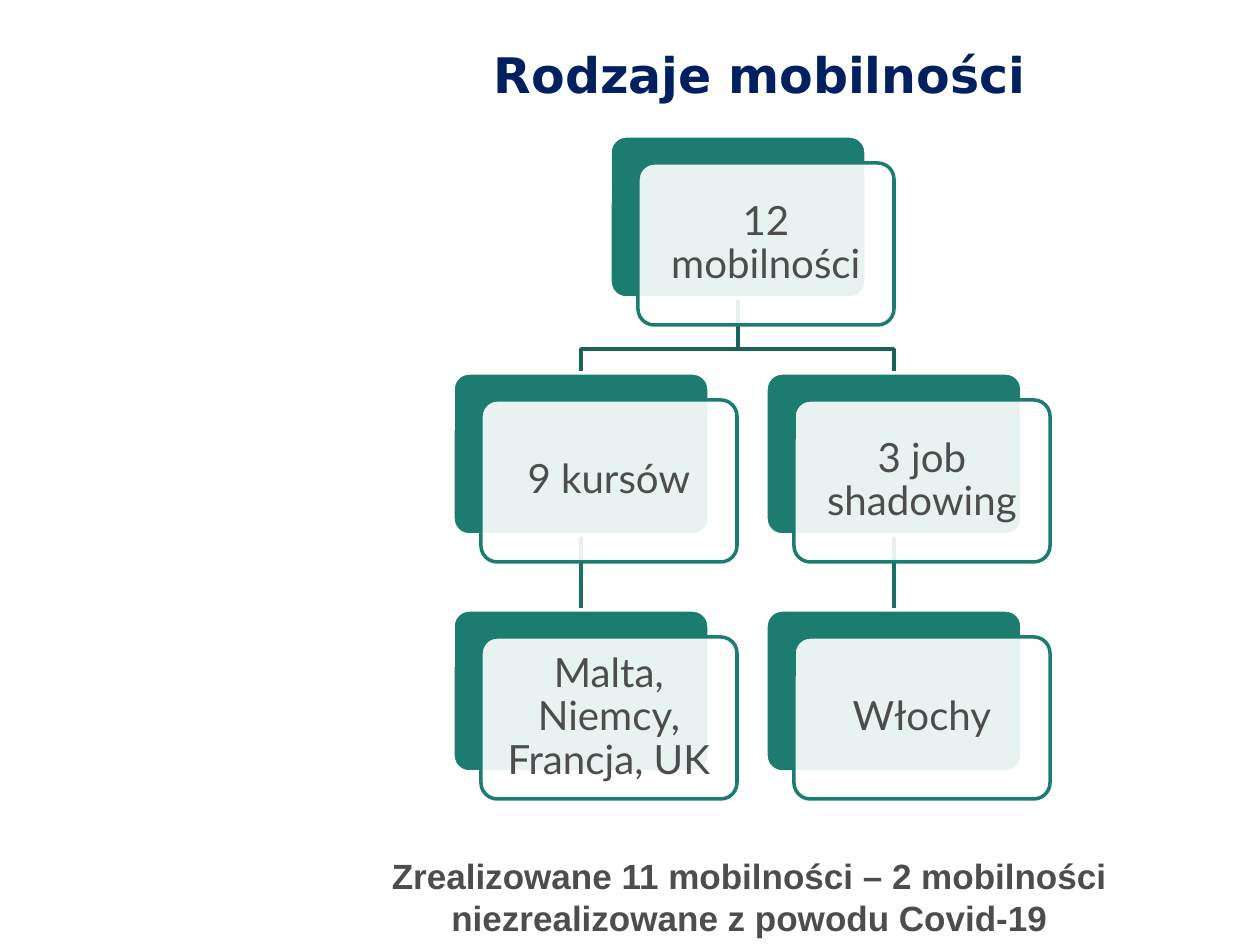
from dataclasses import dataclass

import pptx
import pptx.dml.color
import pptx.enum.shapes
import pptx.enum.text
import pptx.oxml
import pptx.oxml.ns
import pptx.util

PX = 914400 // 126
SLIDE_SIZE = (1260, 945)

CARD_WIDTH, CARD_HEIGHT = 256, 162
FRONT_SHIFT = (28, 27)
LEFT, TOP = 453, 136
COLUMN_STEP, ROW_STEP = 313, 237
BEND_ABOVE_CHILD = 24

# (text, column, row); the root stands halfway between the two columns
ROOT = ("12 mobilności", 0.5, 0)
BRANCHES = [
    [("9 kursów", 0, 1), ("Malta, Niemcy, Francja, UK", 0, 2)],
    [("3 job shadowing", 1, 1), ("Włochy", 1, 2)],
]


@dataclass(frozen=True)
class Theme:
    title: str = "002060"
    text: str = "4D4D4D"
    card: str = "1C7C70"
    white: str = "FFFFFF"
    upper_link: str = "16635A"
    lower_link: str = "197166"
    title_font: str = "DejaVu Sans"
    card_font: str = "Lato"
    note_font: str = "Arial"
    title_size: int = 28
    card_size: int = 23
    note_size: int = 20
    line_width: int = 2


THEME = Theme()


def emu(*lengths):
    return [round(length * PX) for length in lengths]


def rgb(color):
    return pptx.dml.color.RGBColor.from_string(color)


def set_line(line, color):
    line.color.rgb = rgb(color)
    line.width = pptx.util.Pt(THEME.line_width)


def write(frame, text, font, size, color, bold=False, spacing=1.0):
    frame.word_wrap = True
    para = frame.paragraphs[0]
    para.text = text
    para.alignment = pptx.enum.text.PP_ALIGN.CENTER
    para.line_spacing = spacing
    para.font.name = font
    para.font.size = pptx.util.Pt(size)
    para.font.bold = bold
    para.font.color.rgb = rgb(color)


def add_text(slide, place, *style, **options):
    box = slide.shapes.add_textbox(*emu(*place))
    write(box.text_frame, *style, **options)
    return box


def card_corner(card):
    _, column, row = card
    return round(LEFT + column * COLUMN_STEP), TOP + row * ROW_STEP


def add_plate(slide, left, top, fill, outline):
    plate = slide.shapes.add_shape(
        pptx.enum.shapes.MSO_SHAPE.ROUNDED_RECTANGLE,
        *emu(left, top, CARD_WIDTH, CARD_HEIGHT))
    plate.adjustments[0] = 0.1
    plate.shadow.inherit = False
    plate.fill.solid()
    plate.fill.fore_color.rgb = rgb(fill)
    set_line(plate.line, outline)
    return plate


def set_opacity(shape, percent):
    color = shape.fill._xPr.find(".//" + pptx.oxml.ns.qn("a:srgbClr"))
    alpha = pptx.oxml.parse_xml(
        f'<a:alpha {pptx.oxml.ns.nsdecls("a")} val="{percent * 1000}"/>')
    color.append(alpha)


def add_card(slide, card):
    """A solid back plate with a see-through front plate that holds the text."""
    left, top = card_corner(card)
    add_plate(slide, left, top, THEME.card, THEME.white)
    front = add_plate(slide, left + FRONT_SHIFT[0], top + FRONT_SHIFT[1],
                      THEME.white, THEME.card)
    set_opacity(front, 90)
    frame = front.text_frame
    frame.margin_left = frame.margin_right = emu(8)[0]
    frame.margin_top = frame.margin_bottom = emu(8)[0]
    frame.vertical_anchor = pptx.enum.text.MSO_ANCHOR.MIDDLE
    write(frame, card[0], THEME.card_font, THEME.card_size, THEME.text,
          spacing=0.9)


def link_ends(parent, child):
    """Bottom centre of the parent's back plate, top centre of the child's."""
    (start_left, start_top), (end_left, end_top) = map(card_corner, (parent, child))
    half = CARD_WIDTH // 2
    return start_left + half, start_top + CARD_HEIGHT, end_left + half, end_top


def add_elbow_link(slide, parent, child):
    start_x, start_y, end_x, end_y = link_ends(parent, child)
    bend_y = end_y - BEND_ABOVE_CHILD
    builder = slide.shapes.build_freeform(start_x, start_y, scale=PX)
    builder.add_line_segments(
        [(start_x, bend_y), (end_x, bend_y), (end_x, end_y)], close=False)
    link = builder.convert_to_shape()
    link.shadow.inherit = False
    link.fill.background()
    set_line(link.line, THEME.upper_link)


def add_straight_link(slide, parent, child):
    link = slide.shapes.add_connector(
        pptx.enum.shapes.MSO_CONNECTOR.STRAIGHT, *emu(*link_ends(parent, child)))
    set_line(link.line, THEME.lower_link)
    link._element.spPr.append(pptx.oxml.parse_xml(
        f'<a:effectLst {pptx.oxml.ns.nsdecls("a")}/>'))


def main():
    deck = pptx.Presentation()
    deck.slide_width, deck.slide_height = emu(*SLIDE_SIZE)
    slide = deck.slides.add_slide(deck.slide_layouts[6])

    title = add_text(slide, (282, 45, 955, 91), "Rodzaje mobilności",
                     THEME.title_font, THEME.title_size, THEME.title,
                     bold=True, spacing=0.8)
    title.text_frame.margin_top = emu(11)[0]

    for parent, child in BRANCHES:
        add_elbow_link(slide, ROOT, parent)
        add_straight_link(slide, parent, child)
    for card in [ROOT, *BRANCHES[0], *BRANCHES[1]]:
        add_card(slide, card)

    add_text(slide, (333, 848, 833, 97),
             "Zrealizowane 11 mobilności – 2 mobilności "
             "niezrealizowane z powodu Covid-19",
             THEME.note_font, THEME.note_size, THEME.text, bold=True)
    deck.save("out.pptx")


if __name__ == "__main__":
    main()
